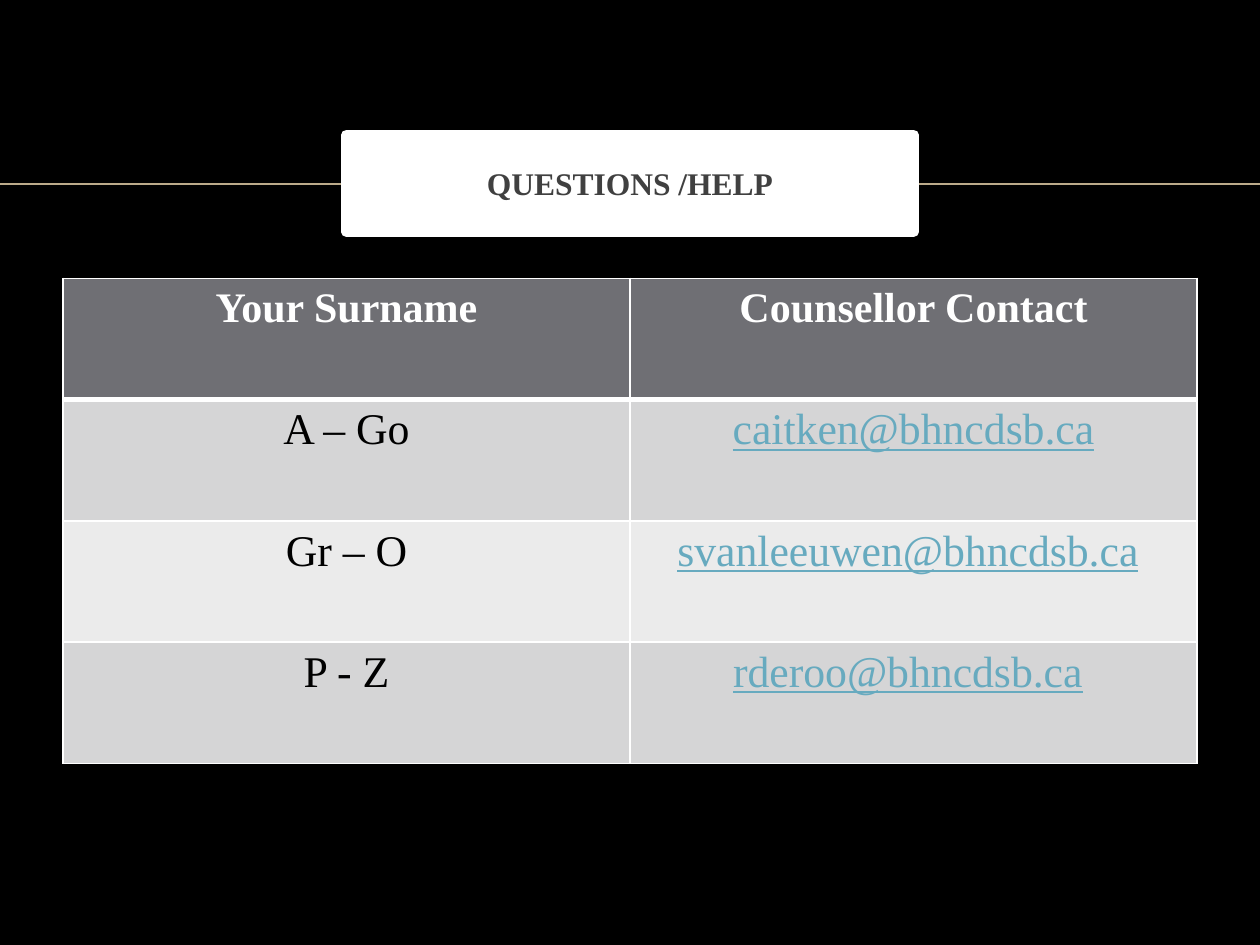
from dataclasses import dataclass

from lxml import etree
from pptx import Presentation
from pptx import util as u
from pptx.dml.color import RGBColor
from pptx.enum import shapes, text
from pptx.oxml import ns


@dataclass(frozen=True)
class Theme:
    font: str = "Times New Roman"
    background: str = "000000"
    white: str = "FFFFFF"
    rule: str = "BBAA8A"
    title: str = "404040"
    header: str = "6F6F74"
    bands: tuple = ("D5D5D6", "EBEBEB")
    body: str = "000000"
    link: str = "67AABF"
    title_size: int = 18
    header_size: int = 24
    body_size: int = 25


def rgb(value):
    return RGBColor.from_string(value)


def set_borders(cell, color, widths):
    """Draw the cell's edges; widths are points for left, right, top, bottom."""
    properties = cell._tc.get_or_add_tcPr()
    for index, (side, width) in enumerate(zip("LRTB", widths)):
        edge = etree.Element(ns.qn(f"a:ln{side}"), w=str(u.Pt(width)))
        fill = etree.SubElement(edge, ns.qn("a:solidFill"))
        etree.SubElement(fill, ns.qn("a:srgbClr"), val=color)
        properties.insert(index, edge)


class SlideBuilder:
    def __init__(self, page, theme):
        self.page = page
        self.theme = theme
        page.background.fill.solid()
        page.background.fill.fore_color.rgb = rgb(theme.background)

    def style(self, para, size, color, bold=False, underline=False):
        para.alignment = text.PP_ALIGN.CENTER
        font = para.font
        font.name = self.theme.font
        font.size = u.Pt(size)
        font.color.rgb = rgb(color)
        font.bold = bold
        font.underline = underline

    def title(self, wording, left, top, width, height):
        box = self.page.shapes.title
        box.left, box.top = u.Inches(left), u.Inches(top)
        box.width, box.height = u.Inches(width), u.Inches(height)
        box.fill.solid()
        box.fill.fore_color.rgb = rgb(self.theme.white)
        box.line.color.rgb = rgb(self.theme.white)
        box.line.width = u.Pt(6)
        frame = box.text_frame
        frame.text = wording
        frame.auto_size = text.MSO_AUTO_SIZE.NONE
        frame.vertical_anchor = text.MSO_ANCHOR.MIDDLE
        self.style(frame.paragraphs[0], self.theme.title_size, self.theme.title, bold=True)

    def rule(self, y, width):
        """Draw a horizontal line behind everything else."""
        line = self.page.shapes.add_connector(
            shapes.MSO_CONNECTOR.STRAIGHT, 0, u.Inches(y), u.Inches(width), u.Inches(y))
        line.line.color.rgb = rgb(self.theme.rule)
        line.line.width = u.Pt(1)
        line._element.spPr.append(etree.Element(ns.qn("a:effectLst")))
        self.page.shapes._spTree.insert(2, line._element)

    def table(self, rows, left, top, width, height):
        grid = self.page.shapes.add_table(
            len(rows), len(rows[0]), u.Inches(left), u.Inches(top),
            u.Inches(width), u.Inches(height)).table
        for row, values in enumerate(rows):
            for column, wording in enumerate(values):
                self.cell(grid.cell(row, column), row, wording)
        return grid

    def cell(self, cell, row, wording):
        theme = self.theme
        is_header, is_link = row == 0, "@" in wording
        cell.text = wording
        cell.fill.solid()
        cell.fill.fore_color.rgb = rgb(theme.header if is_header else theme.bands[(row - 1) % 2])
        set_borders(cell, theme.white, (1, 1, 3 if row == 1 else 1, 3 if is_header else 1))
        para = cell.text_frame.paragraphs[0]
        if is_header:
            self.style(para, theme.header_size, theme.white, bold=True)
        else:
            self.style(para, theme.body_size, theme.link if is_link else theme.body,
                       underline=is_link)


def main():
    deck = Presentation()
    deck.slide_width, deck.slide_height = u.Inches(10), u.Inches(7.5)
    page = deck.slides.add_slide(deck.slide_layouts.get_by_name("Title Only"))
    builder = SlideBuilder(page, Theme())
    builder.rule(1.46, 10)
    contacts = builder.table([
        ("Your Surname", "Counsellor Contact"),
        ("A – Go", "caitken@bhncdsb.ca"),
        ("Gr – O", "svanleeuwen@bhncdsb.ca"),
        ("P - Z", "rderoo@bhncdsb.ca"),
    ], 0.5, 2.21, 9, 3.85)
    for row in (2, 3):
        contacts.cell(row, 1).margin_right = u.Inches(0.19)
    builder.title("QUESTIONS /HELP", 2.75, 1.07, 4.5, 0.77)
    # The title box covers the rule and the table, so it goes on top.
    page.shapes._spTree.append(page.shapes.title._element)
    deck.save("out.pptx")


if __name__ == "__main__":
    main()
